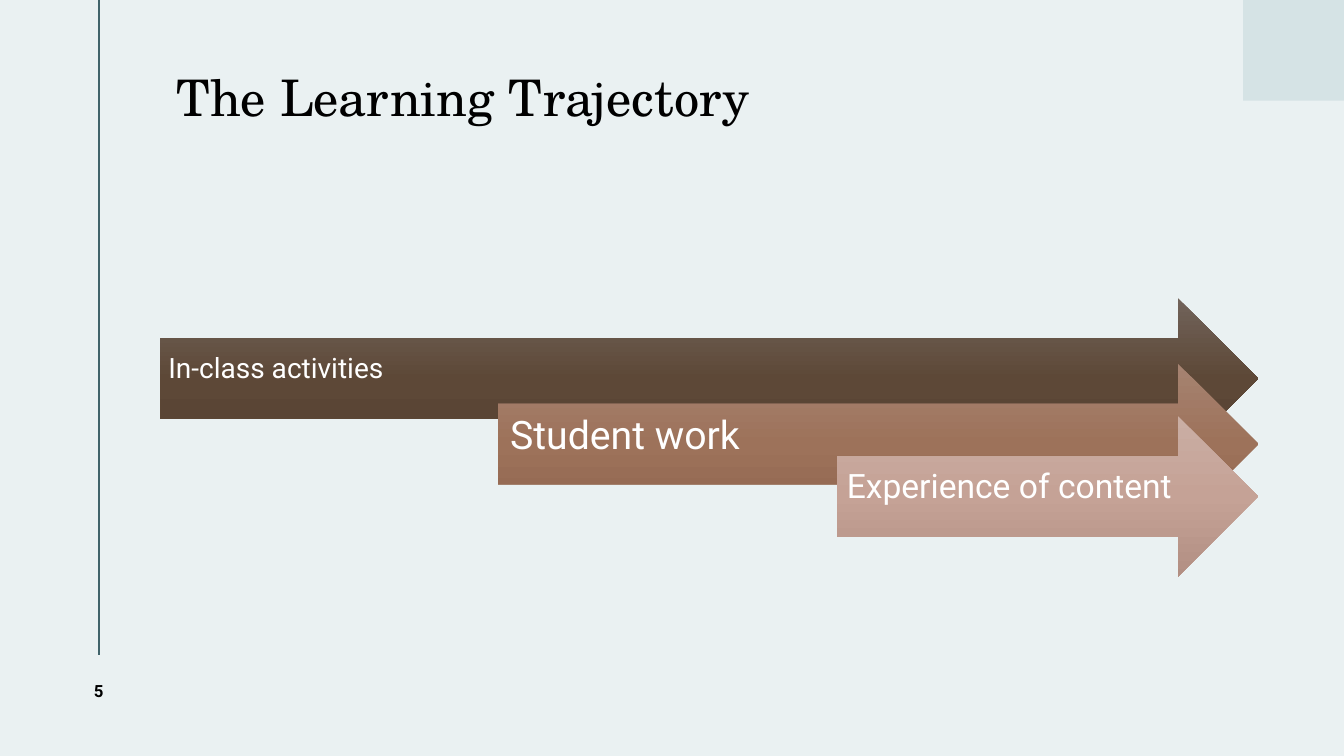
from copy import deepcopy
from dataclasses import dataclass

from pptx import Presentation
from pptx.dml.color import RGBColor
from pptx.enum import shapes, text
from pptx.oxml import ns, xmlchemy
from pptx.util import Pt

PX = 9144  # 100 px to the inch
WIDE, HIGH = 1333, 750


@dataclass(frozen=True)
class Theme:
    back: str = "EAF1F2"
    rule: str = "40636A"
    corner: str = "D5E3E5"
    ink: str = "000000"
    light: str = "FFFFFF"
    head: str = "TeX Gyre Schola"
    body: str = "Roboto"
    title: int = 36
    page: int = 12


THEME = Theme()
TIP, ARROW = 1248, 159  # shared right end and height of the arrows

# label, left, top, type size, left and top inset, gradient colours
STAGES = [
    ("In-class activities", 159, 296, 20, 8, ("71635A", "5D4837", "544030")),
    ("Student work", 494, 361, 28, 12, ("A68371", "9D725A", "8F644D")),
    ("Experience of content", 830, 413, 24, 10, ("CAAEA4", "C5A296", "B28F83")),
]


def rgb(code):
    return RGBColor.from_string(code)


def emu(*sizes):
    return [size * PX for size in sizes]


def add_text(slide, words, box, *, size, color, font=THEME.body, bold=False,
             align=text.PP_ALIGN.LEFT, inset=(10, 5, 10, 5), lead=1.0, track=None):
    frame = slide.shapes.add_textbox(*emu(*box)).text_frame
    frame.word_wrap = True
    frame.vertical_anchor = text.MSO_ANCHOR.MIDDLE
    (frame.margin_left, frame.margin_top,
     frame.margin_right, frame.margin_bottom) = emu(*inset)
    para = frame.paragraphs[0]
    para.alignment, para.line_spacing = align, lead
    run = para.add_run()
    run.text = words
    run.font.name, run.font.size, run.font.bold = font, Pt(size), bold
    run.font.color.rgb = rgb(color)
    if track:
        run.font._element.set("spc", str(int(track * 100)))


def add_block(slide, kind, box):
    block = slide.shapes.add_shape(kind, *emu(*box))
    block.shadow.inherit = False
    block.line.fill.background()
    return block


def add_rule(slide, start, end):
    rule = slide.shapes.add_connector(shapes.MSO_CONNECTOR.STRAIGHT, *emu(*start, *end))
    rule.line.color.rgb = rgb(THEME.rule)
    rule.line.width = Pt(1.5)
    rule._element.spPr.append(xmlchemy.OxmlElement("a:effectLst"))


def shade(block, colors):
    """Fill from top to bottom with three evenly spaced colours."""
    fill = block.fill
    fill.gradient()
    fill.gradient_angle = 270
    stops = block._element.spPr.find(".//" + ns.qn("a:gsLst"))
    stops.insert(1, deepcopy(stops[0]))
    for index, (stop, color) in enumerate(zip(fill.gradient_stops, colors)):
        stop.position = index / 2
        stop.color.rgb = rgb(color)


def add_stage(slide, label, left, top, size, pad, colors):
    wide, quarter = TIP - left, ARROW // 4
    arrow = add_block(slide, shapes.MSO_SHAPE.RIGHT_ARROW, (left, top, wide, ARROW))
    shade(arrow, colors)
    add_text(slide, label, (left, top + quarter, wide - quarter, ARROW // 2),
             size=size, color=THEME.light, inset=(pad, pad, 28, 25), lead=0.9)


def main():
    deck = Presentation()
    deck.slide_width, deck.slide_height = emu(WIDE, HIGH)
    slide = deck.slides.add_slide(deck.slide_layouts[6])
    slide.background.fill.solid()
    slide.background.fill.fore_color.rgb = rgb(THEME.back)

    add_rule(slide, (98, 0), (98, 650))
    corner = add_block(slide, shapes.MSO_SHAPE.RECTANGLE, (WIDE - 100, 0, 100, 100))
    corner.fill.solid()
    corner.fill.fore_color.rgb = rgb(THEME.corner)

    add_text(slide, "The Learning Trajectory", (161, 55, 1001, 88), size=THEME.title,
             color=THEME.ink, font=THEME.head, inset=(14, 5, 10, 5), lead=0.9)
    for stage in STAGES:
        add_stage(slide, *stage)
    add_text(slide, "5", (45, 650, 106, 71), size=THEME.page, color=THEME.ink,
             bold=True, align=text.PP_ALIGN.CENTER, track=1.5)
    deck.save("out.pptx")


if __name__ == "__main__":
    main()
